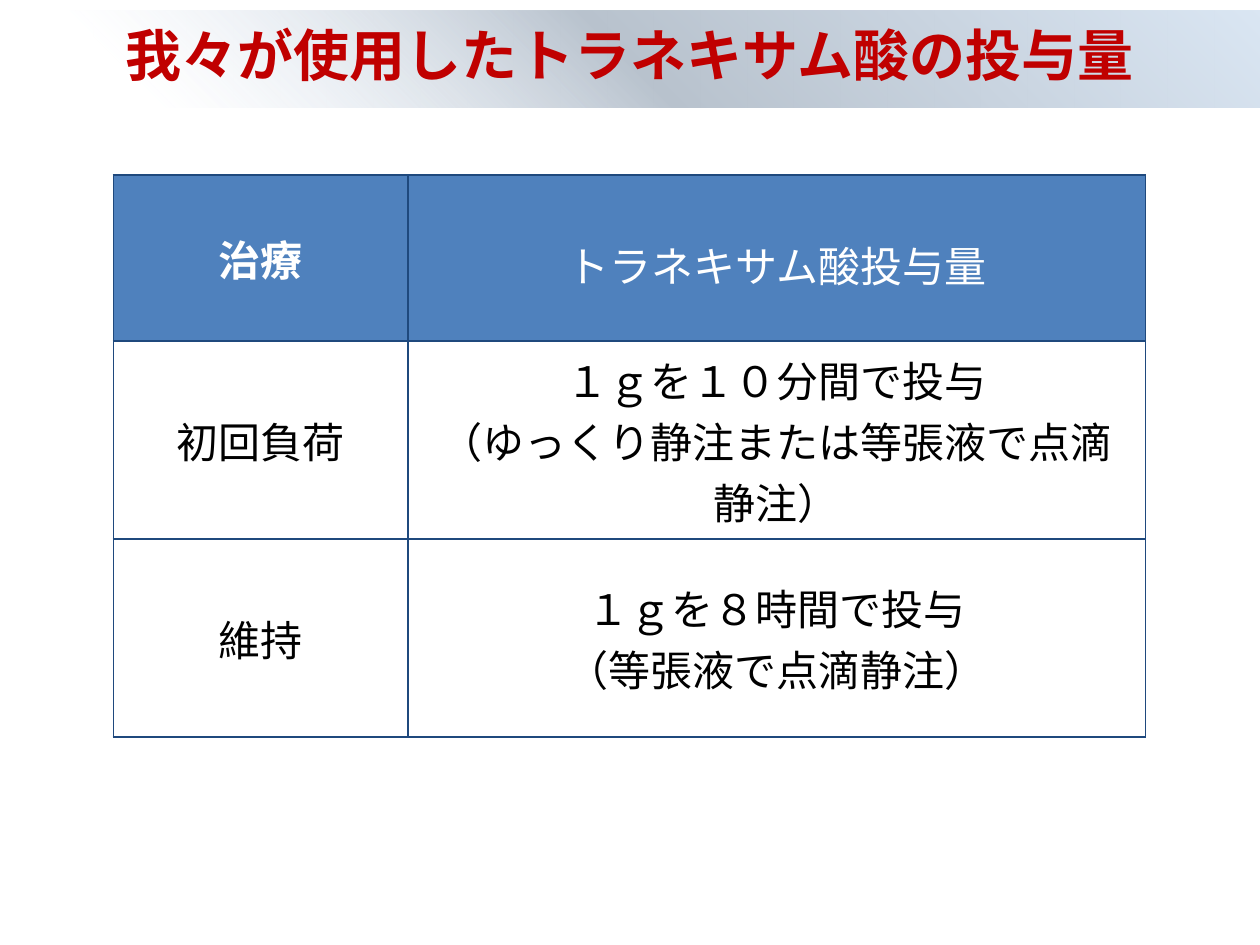
from lxml import etree
from pptx import Presentation
from pptx import util as u
from pptx.dml import color
from pptx.enum import text
from pptx.oxml import ns

Pt = u.Pt
theme = {
    "font": "Calibri",
    "title_size": 32,
    "table_size": 24,
    "title": "C00000",
    "header_fill": "4F81BD",
    "header_text": "FFFFFF",
    "body_text": "000000",
    "border": "1F497D",
    "band": [(12, "DCE6F2", 0), (50, "B8C2CD", 100), (100, "DAE6F3", 100)],
}


def add_xml(parent, tag, **attributes):
    return etree.SubElement(parent, ns.qn(tag), attributes)


def write_lines(frame, lines, size, ink, bold):
    frame.text = "\n".join(lines)
    font_format = {"name": theme["font"], "size": Pt(size), "bold": bold}
    for paragraph in frame.paragraphs:
        paragraph.alignment = text.PP_ALIGN.CENTER
        for run in paragraph.runs:
            for key, value in font_format.items():
                setattr(run.font, key, value)
            run.font.color.rgb = color.RGBColor.from_string(ink)


deck = Presentation()
deck.slide_width, deck.slide_height = Pt(720), Pt(540)
slide = deck.slides.add_slide(deck.slide_layouts[5])

heading = slide.shapes.title
heading_place = {"left": 0, "top": Pt(5.8), "width": Pt(720), "height": Pt(55.4)}
for key, value in heading_place.items():
    setattr(heading, key, value)
write_lines(heading.text_frame, ["我々が使用したトラネキサム酸の投与量"],
            theme["title_size"], theme["title"], True)
heading_format = {
    "auto_size": text.MSO_AUTO_SIZE.NONE,
    "vertical_anchor": text.MSO_ANCHOR.BOTTOM,
    "margin_top": 0,
    "margin_bottom": Pt(11.3),
}
for key, value in heading_format.items():
    setattr(heading.text_frame, key, value)

band = add_xml(heading._element.spPr, "a:gradFill", rotWithShape="1")
stops = add_xml(band, "a:gsLst")
for position, tint, opacity in theme["band"]:
    stop = add_xml(stops, "a:gs", pos=str(position * 1000))
    stop_color = add_xml(stop, "a:srgbClr", val=tint)
    if opacity < 100:
        add_xml(stop_color, "a:alpha", val=str(opacity * 1000))
add_xml(band, "a:lin", ang=str(315 * 60000), scaled="0")

doses = [
    (["治療"], ["トラネキサム酸投与量"]),
    (["初回負荷"], ["１ｇを１０分間で投与", "（ゆっくり静注または等張液で点滴静注）"]),
    (["維持"], ["１ｇを８時間で投与", "（等張液で点滴静注）"]),
]
column_widths = [168.4, 421.4]
row_heights = [95, 113, 113]
dose_table = slide.shapes.add_table(
    len(row_heights), len(column_widths), Pt(64.8), Pt(100),
    Pt(sum(column_widths)), Pt(sum(row_heights))).table
for column, width in zip(dose_table.columns, column_widths):
    column.width = Pt(width)
for row, height in zip(dose_table.rows, row_heights):
    row.height = Pt(height)

cell_format = {
    "vertical_anchor": text.MSO_ANCHOR.MIDDLE,
    "margin_left": Pt(8.64),
    "margin_right": Pt(8.64),
    "margin_top": Pt(4.32),
    "margin_bottom": Pt(4.32),
}
for row_index, entries in enumerate(doses):
    is_header = row_index == 0
    ink = theme["header_text" if is_header else "body_text"]
    for column_index, lines in enumerate(entries):
        cell = dose_table.cell(row_index, column_index)
        write_lines(cell.text_frame, lines, theme["table_size"], ink,
                    is_header and column_index == 0)
        for key, value in cell_format.items():
            setattr(cell, key, value)
        for side in ("a:lnL", "a:lnR", "a:lnT", "a:lnB"):
            border = add_xml(cell._tc.tcPr, side, w=str(Pt(1)))
            add_xml(add_xml(border, "a:solidFill"), "a:srgbClr", val=theme["border"])
        if is_header:
            cell.fill.solid()
            cell.fill.fore_color.rgb = color.RGBColor.from_string(theme["header_fill"])
        else:
            cell.fill.background()
dose_table.cell(0, 1).margin_top = Pt(11.2)

deck.save("out.pptx")
